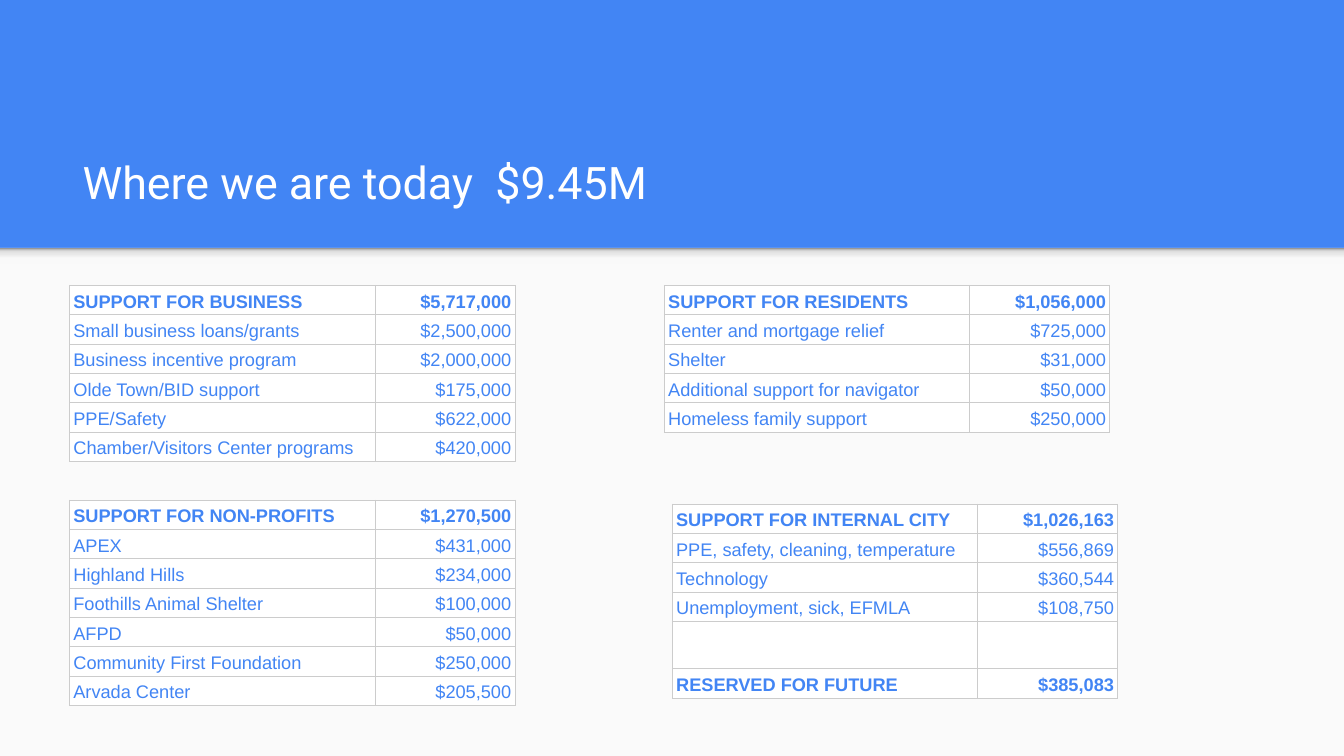
"""Build the slide that sums up current support funding by group."""
import copy

import pptx
import pptx.dml.color
import pptx.enum.text
import pptx.oxml
import pptx.oxml.ns
import pptx.util
from pptx.util import Cm

TITLE = "Where we are today  $9.45M"
BLUE, WHITE, PAPER, GRID = "4285F4", "FFFFFF", "FAFAFA", "CCCCCC"
SHADOW_STOPS = [(0, "F9F9F9"), (0.36, "F9F9F9"), (0.8, "DEDEDE"), (1, "999999")]
BLANK = ("", "")

BUSINESS = [
    ("SUPPORT FOR BUSINESS", "$5,717,000"),
    ("Small business loans/grants", "$2,500,000"),
    ("Business incentive program", "$2,000,000"),
    ("Olde Town/BID support", "$175,000"),
    ("PPE/Safety", "$622,000"),
    ("Chamber/Visitors Center programs", "$420,000"),
]
NON_PROFITS = [
    ("SUPPORT FOR NON-PROFITS", "$1,270,500"),
    ("APEX", "$431,000"),
    ("Highland Hills", "$234,000"),
    ("Foothills Animal Shelter", "$100,000"),
    ("AFPD", "$50,000"),
    ("Community First Foundation", "$250,000"),
    ("Arvada Center", "$205,500"),
]
RESIDENTS = [
    ("SUPPORT FOR RESIDENTS", "$1,056,000"),
    ("Renter and mortgage relief", "$725,000"),
    ("Shelter", "$31,000"),
    ("Additional support for navigator", "$50,000"),
    ("Homeless family support", "$250,000"),
]
INTERNAL_CITY = [
    ("SUPPORT FOR INTERNAL CITY", "$1,026,163"),
    ("PPE, safety, cleaning, temperature", "$556,869"),
    ("Technology", "$360,544"),
    ("Unemployment, sick, EFMLA", "$108,750"),
    BLANK,
    ("RESERVED FOR FUTURE", "$385,083"),
]
TABLES = [
    (BUSINESS, 1.75, 7.19),
    (NON_PROFITS, 1.75, 12.6),
    (RESIDENTS, 16.74, 7.19),
    (INTERNAL_CITY, 16.94, 12.7),
]

SLIDE_WIDTH, SLIDE_HEIGHT = 33.87, 19.05
HEADER_HEIGHT, SHADOW_HEIGHT = 6.25, 0.41
COLUMN_WIDTHS = (7.7, 3.53)
ROW_HEIGHT, BLANK_HEIGHT = 0.74, 1.19


def color(value):
    return pptx.dml.color.RGBColor.from_string(value)


def add_band(page, top, height):
    band = page.shapes.add_shape(
        pptx.enum.shapes.MSO_SHAPE.RECTANGLE, 0, Cm(top), Cm(SLIDE_WIDTH), Cm(height))
    band.shadow.inherit = False
    band.line.fill.background()
    return band


def add_background(page):
    page.background.fill.solid()
    page.background.fill.fore_color.rgb = color(BLUE)
    paper = add_band(page, HEADER_HEIGHT, SLIDE_HEIGHT - HEADER_HEIGHT)
    paper.fill.solid()
    paper.fill.fore_color.rgb = color(PAPER)

    shadow = add_band(page, HEADER_HEIGHT, SHADOW_HEIGHT)
    shadow.fill.gradient()
    shadow.fill.gradient_angle = 90
    stop_list = next(shadow.element.iter(pptx.oxml.ns.qn("a:gsLst")))
    while len(stop_list) < len(SHADOW_STOPS):
        stop_list.append(copy.deepcopy(stop_list[0]))
    for stop, (position, shade) in zip(shadow.fill.gradient_stops, SHADOW_STOPS):
        stop.position = position
        stop.color.rgb = color(shade)


def add_title(page):
    title = page.shapes.title
    title.left, title.top, title.width, title.height = Cm(1.75), Cm(2.74), Cm(30.45), Cm(2.85)
    frame = title.text_frame
    frame.text = TITLE
    frame.auto_size = pptx.enum.text.MSO_AUTO_SIZE.NONE
    frame.vertical_anchor = pptx.enum.text.MSO_ANCHOR.BOTTOM
    frame.margin_left = frame.margin_right = frame.margin_top = frame.margin_bottom = Cm(0.33)
    para = frame.paragraphs[0]
    para.alignment = pptx.enum.text.PP_ALIGN.LEFT
    para.font.name, para.font.size = "Roboto", pptx.util.Pt(32)
    para.font.color.rgb = color(WHITE)


def add_borders(cell):
    properties = cell._tc.get_or_add_tcPr()
    for position, side in enumerate(("lnL", "lnR", "lnT", "lnB")):
        border = pptx.oxml.parse_xml(
            f'<a:{side} {pptx.oxml.ns.nsdecls("a")} w="{pptx.util.Pt(0.75)}">'
            f'<a:solidFill><a:srgbClr val="{GRID}"/></a:solidFill></a:{side}>')
        properties.insert(position, border)


def format_cell(cell, text, alignment, bold):
    cell.fill.solid()
    cell.fill.fore_color.rgb = color(WHITE)
    add_borders(cell)
    cell.margin_left = cell.margin_right = Cm(0.1)
    cell.margin_top = cell.margin_bottom = Cm(0.07)
    cell.vertical_anchor = pptx.enum.text.MSO_ANCHOR.BOTTOM
    cell.text = text
    para = cell.text_frame.paragraphs[0]
    para.alignment, para.line_spacing = alignment, 1.15
    para.font.name, para.font.size = "Arial", pptx.util.Pt(13)
    para.font.bold = bold
    para.font.color.rgb = color(BLUE)


def add_funding_table(page, entries, left, top):
    heights = [BLANK_HEIGHT if entry == BLANK else ROW_HEIGHT for entry in entries]
    table = page.shapes.add_table(
        len(entries), len(COLUMN_WIDTHS), Cm(left), Cm(top),
        Cm(sum(COLUMN_WIDTHS)), Cm(sum(heights))).table
    table.first_row = table.horz_banding = False
    for column, width in zip(table.columns, COLUMN_WIDTHS):
        column.width = Cm(width)
    alignments = (pptx.enum.text.PP_ALIGN.LEFT, pptx.enum.text.PP_ALIGN.RIGHT)
    previous = BLANK
    for row, height, entry in zip(table.rows, heights, entries):
        row.height = Cm(height)
        starts_group = previous == BLANK
        for cell, text, alignment in zip(row.cells, entry, alignments):
            format_cell(cell, text, alignment, starts_group)
        previous = entry


def main():
    deck = pptx.Presentation()
    deck.slide_width, deck.slide_height = Cm(SLIDE_WIDTH), Cm(SLIDE_HEIGHT)
    page = deck.slides.add_slide(deck.slide_layouts.get_by_name("Title Only"))
    add_background(page)
    add_title(page)
    for entries, left, top in TABLES:
        add_funding_table(page, entries, left, top)
    deck.save("out.pptx")


if __name__ == "__main__":
    main()
